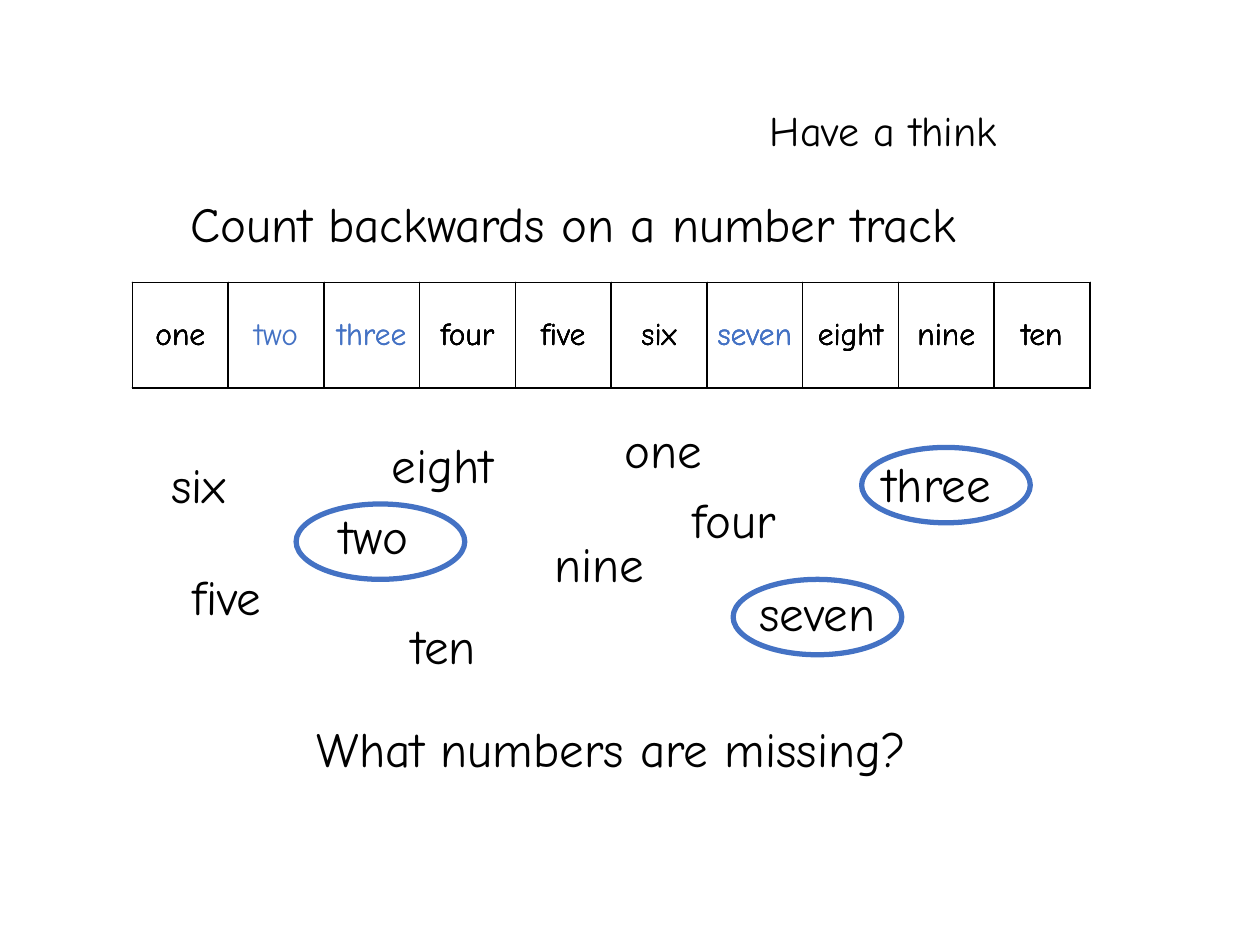
from lxml.etree import SubElement
from pptx import Presentation
from pptx.dml.color import RGBColor
from pptx.enum.shapes import MSO_SHAPE as Shape
from pptx.enum.text import MSO_ANCHOR as Anchor, MSO_AUTO_SIZE as AutoSize, PP_ALIGN as Align
from pptx.oxml.ns import qn
from pptx.util import Cm, Pt

BLACK = RGBColor(0x00, 0x00, 0x00)
BLUE = RGBColor(0x44, 0x72, 0xC4)

NUMBERS = ["one", "two", "three", "four", "five", "six", "seven", "eight", "nine", "ten"]
MISSING = ["seven", "three", "two"]
SCATTERED = {
    "one": (12.34, 8.33),
    "two": (6.6, 10.06),
    "three": (17.55, 9.02),
    "four": (13.72, 9.75),
    "five": (3.63, 11.3),
    "six": (3.2, 9.04),
    "seven": (15.06, 11.61),
    "eight": (7.65, 8.64),
    "nine": (10.92, 10.64),
    "ten": (8.05, 12.29),
}
RINGS = [(14.78, 11.68), (17.37, 9.02), (5.97, 10.16)]


class Worksheet:
    font = "Comic Neue"
    cell_width = 1.93
    cell_height = 2.13

    def __init__(self, slide):
        self.slide = slide

    def add_words(self, frame, words, size, color=BLACK, align=Align.LEFT):
        paragraph = frame.paragraphs[0]
        paragraph.alignment = align
        run = paragraph.add_run()
        run.text = words
        run.font.name = self.font
        run.font.size = Pt(size)
        run.font.color.rgb = color

    def title(self, words, left, top, width, height):
        heading = self.slide.shapes.title
        heading.left, heading.top = Cm(left), Cm(top)
        heading.width, heading.height = Cm(width), Cm(height)
        frame = heading.text_frame
        frame.vertical_anchor = Anchor.TOP
        frame.auto_size = AutoSize.SHAPE_TO_FIT_TEXT
        self.add_words(frame, words, 28)

    def text(self, words, left, top, width, height=1.45, size=28, align=Align.LEFT):
        box = self.slide.shapes.add_textbox(Cm(left), Cm(top), Cm(width), Cm(height))
        frame = box.text_frame
        frame.word_wrap = True
        frame.auto_size = AutoSize.SHAPE_TO_FIT_TEXT
        self.add_words(frame, words, size, align=align)

    def ring(self, left, top):
        oval = self.slide.shapes.add_shape(Shape.OVAL, Cm(left), Cm(top), Cm(3.4), Cm(1.52))
        oval.shadow.inherit = False
        oval.fill.background()
        oval.line.color.rgb = BLUE
        oval.line.width = Pt(3)

    def border(self, cell):
        properties = cell._tc.get_or_add_tcPr()
        for side in ("a:lnL", "a:lnR", "a:lnT", "a:lnB"):
            edge = SubElement(properties, qn(side), w=str(Pt(1)))
            fill = SubElement(edge, qn("a:solidFill"))
            SubElement(fill, qn("a:srgbClr"), val=str(BLACK))

    def track(self, left, top, revealed):
        table = self.slide.shapes.add_table(
            1, len(NUMBERS), Cm(left), Cm(top),
            Cm(self.cell_width * len(NUMBERS)), Cm(self.cell_height)).table
        table.first_row = False
        table.horz_banding = False
        for column, number in enumerate(NUMBERS):
            table.columns[column].width = Cm(self.cell_width)
            cell = table.cell(0, column)
            cell.margin_left = cell.margin_right = cell.margin_top = cell.margin_bottom = 0
            cell.vertical_anchor = Anchor.MIDDLE
            self.border(cell)
            cell.fill.background()
            if number in revealed:
                self.add_words(cell.text_frame, number, 18, BLUE, Align.CENTER)
            elif number not in MISSING:
                self.add_words(cell.text_frame, number, 18, BLACK, Align.CENTER)


def main():
    deck = Presentation()
    deck.slide_width, deck.slide_height = Cm(25.4), Cm(19.05)
    sheet = Worksheet(deck.slides.add_slide(deck.slide_layouts[5]))

    sheet.text("Have a think", 15.27, 1.98, 6.48, 1.27, size=24)
    sheet.track(2.67, 5.69, [])
    sheet.title("Count backwards on a number track", 3.58, 3.78, 17.02, 1.45)
    sheet.text("What numbers are missing?", 3.81, 14.35, 17.02, align=Align.CENTER)
    for number, (left, top) in SCATTERED.items():
        sheet.text(number, left, top, 3.58)
    for left, top in RINGS:
        sheet.ring(left, top)
    for found in range(1, len(MISSING) + 1):
        sheet.track(2.67, 5.69, MISSING[:found])

    deck.save("out.pptx")


if __name__ == "__main__":
    main()
